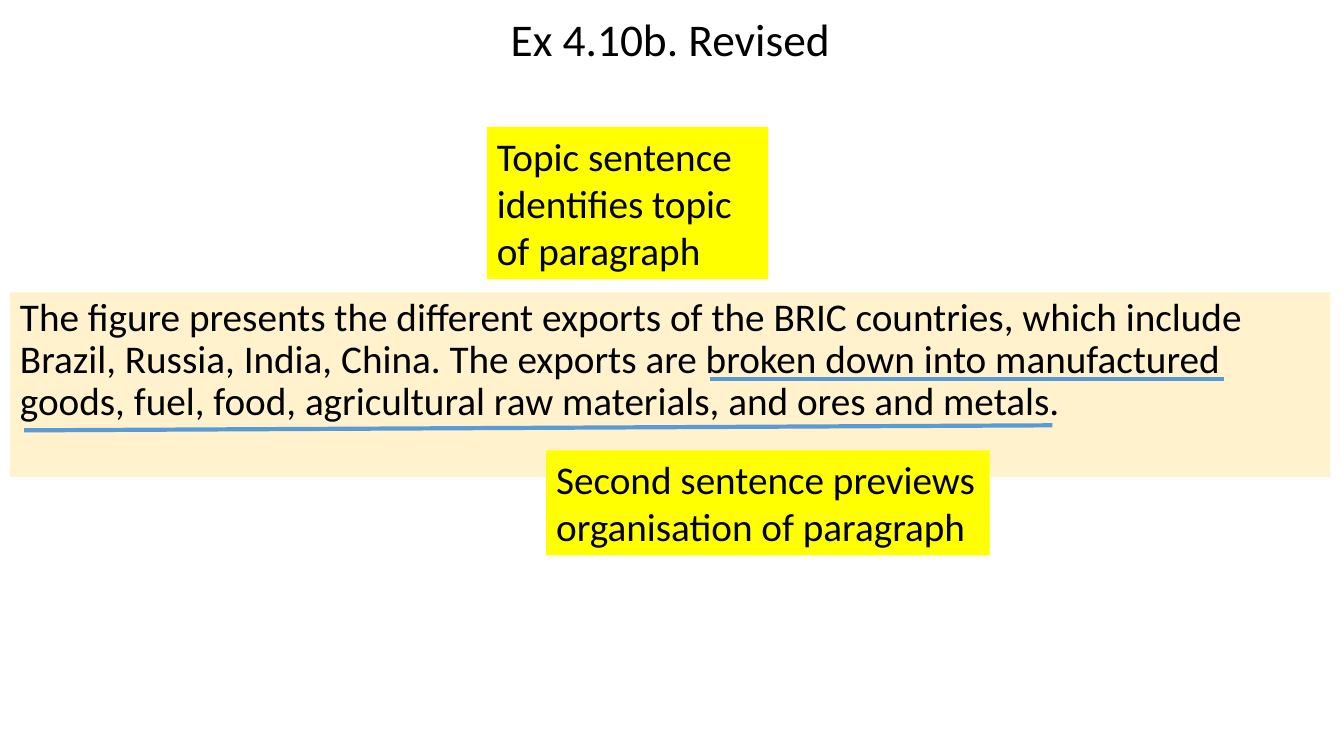
"""Build a slide showing a revised paragraph with notes on its two sentences."""
from pptx import Presentation
from pptx.dml.color import RGBColor
from pptx.enum import shapes, text
from pptx.oxml import parse_xml
from pptx.oxml.ns import nsdecls
from pptx.util import Pt

BLACK = RGBColor(0x00, 0x00, 0x00)
CREAM = RGBColor(0xFF, 0xF2, 0xCC)
YELLOW = RGBColor(0xFF, 0xFF, 0x00)
BLUE = RGBColor(0x5B, 0x9B, 0xD5)

TITLE = "Ex 4.10b. Revised"
PARAGRAPH = (
    "The figure presents the different exports of the BRIC countries, which include "
    "Brazil, Russia, India, China. The exports are broken down into manufactured "
    "goods, fuel, food, agricultural raw materials, and ores and metals."
)
TOPIC_NOTE = "Topic sentence identifies topic of paragraph"
PREVIEW_NOTE = "Second sentence previews\norganisation of paragraph"
UNDERLINES = [(507, 270.7, 874, 270.7), (17.3, 307.4, 751.7, 303.8)]


def add_text(slide, content, frame, size=28, fill=None, align=text.PP_ALIGN.LEFT,
             anchor=text.MSO_ANCHOR.TOP, spacing=1.0, before=0, wrap=True, grow=False):
    box = slide.shapes.add_textbox(*map(Pt, frame))
    if fill is not None:
        box.fill.solid()
        box.fill.fore_color.rgb = fill
    body = box.text_frame
    body.text = content
    body.word_wrap = wrap
    body.vertical_anchor = anchor
    body.auto_size = text.MSO_AUTO_SIZE.SHAPE_TO_FIT_TEXT if grow else text.MSO_AUTO_SIZE.NONE
    for para in body.paragraphs:
        para.alignment = align
        para.line_spacing = spacing
        para.space_before = Pt(before)
        for span in para.runs:
            span.font.name = "Calibri"
            span.font.size = Pt(size)
            span.font.color.rgb = BLACK


def add_underline(slide, ends):
    line = slide.shapes.add_connector(shapes.MSO_CONNECTOR.STRAIGHT, *map(Pt, ends))
    line.line.color.rgb = BLUE
    line.line.width = Pt(3)
    line._element.spPr.append(parse_xml(f"<a:effectLst {nsdecls('a')}/>"))


def main():
    deck = Presentation()
    deck.slide_width, deck.slide_height = Pt(960), Pt(540)
    page = deck.slides.add_slide(deck.slide_layouts[6])
    add_text(page, TITLE, (64.8, 10, 828, 39.6), size=32.4, spacing=0.9,
             align=text.PP_ALIGN.CENTER, anchor=text.MSO_ANCHOR.MIDDLE)
    add_text(page, PARAGRAPH, (7.2, 208.8, 943.2, 131.8), fill=CREAM, spacing=0.9, before=10)
    add_text(page, TOPIC_NOTE, (347.8, 90.7, 200.9, 108.7), fill=YELLOW, grow=True)
    add_text(page, PREVIEW_NOTE, (390.2, 321.8, 316.8, 74.9), fill=YELLOW, wrap=False, grow=True)
    for ends in UNDERLINES:
        add_underline(page, ends)
    deck.save("out.pptx")


if __name__ == "__main__":
    main()
